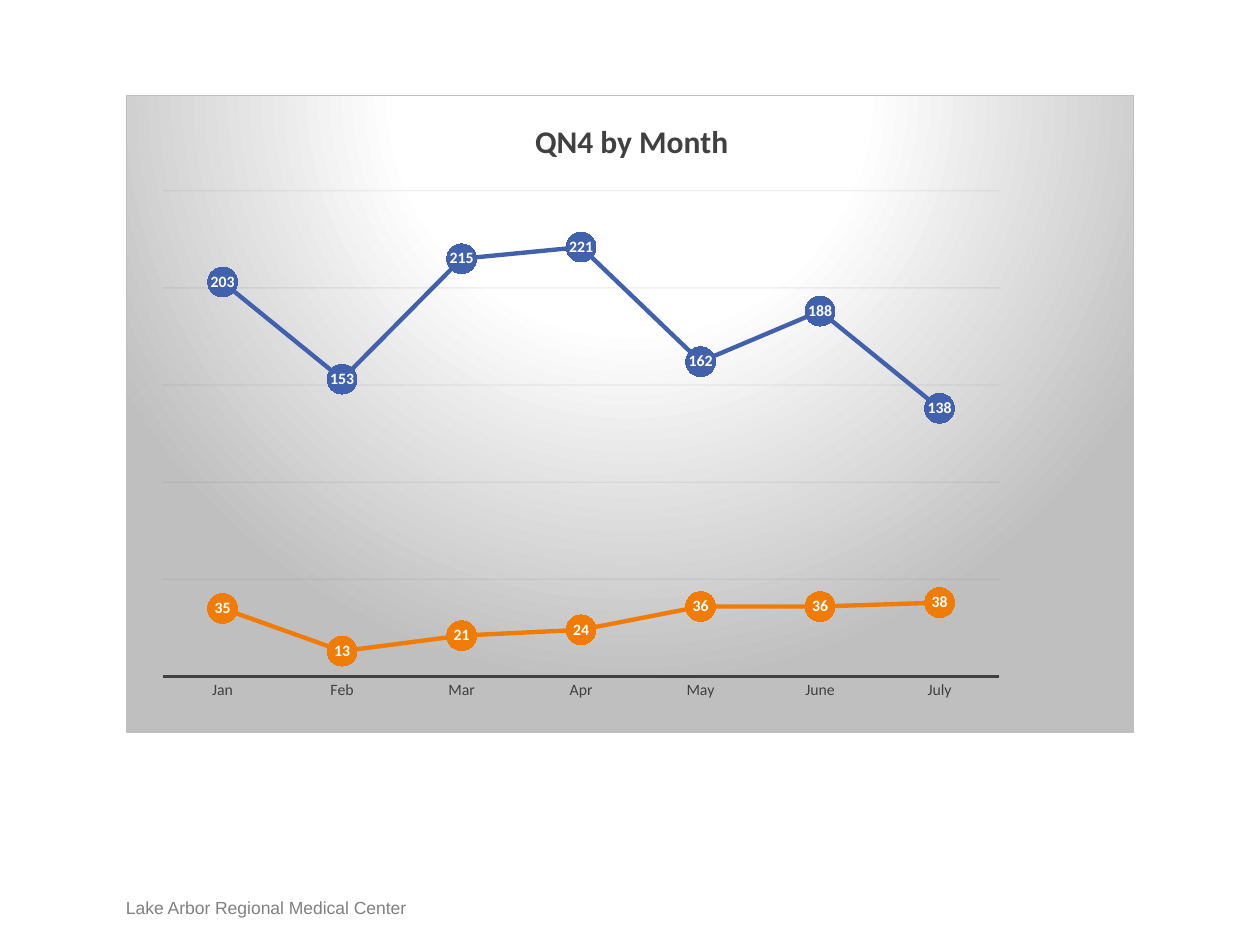
from lxml import etree
from pptx import Presentation
from pptx.chart.data import CategoryChartData
from pptx.dml.color import RGBColor
from pptx.enum.chart import (XL_CHART_TYPE, XL_LABEL_POSITION, XL_MARKER_STYLE,
                             XL_TICK_LABEL_POSITION, XL_TICK_MARK)
from pptx.enum.text import MSO_ANCHOR
from pptx.oxml import parse_xml
from pptx.oxml.ns import nsdecls, qn
from pptx.util import Inches, Pt

LINE_MARKERS = XL_CHART_TYPE.LINE_MARKERS
CENTER = XL_LABEL_POSITION.CENTER
CIRCLE = XL_MARKER_STYLE.CIRCLE
NO_TICK = XL_TICK_MARK.NONE
NEXT_TO_AXIS = XL_TICK_LABEL_POSITION.NEXT_TO_AXIS
BOTTOM = MSO_ANCHOR.BOTTOM

BLUE = RGBColor(0x42, 0x61, 0xAD)
ORANGE = RGBColor(0xF0, 0x7B, 0x05)
WHITE = RGBColor(0xFF, 0xFF, 0xFF)
BLACK = RGBColor(0, 0, 0)
DARK = RGBColor(0x40, 0x40, 0x40)
GRID = RGBColor(0x0D, 0x0D, 0x0D)
SILVER = RGBColor(0xBF, 0xBF, 0xBF)
GRAY = RGBColor(0x80, 0x80, 0x80)

# Content
TITLE = "QN4 by Month"
FOOTER = "Lake Arbor Regional Medical Center"
MONTHS = ["Jan", "Feb", "Mar", "Apr", "May", "June", "July"]
SERIES = [
    ("Series 1", BLUE, [203, 153, 215, 221, 162, 188, 138]),
    ("Series 2", ORANGE, [35, 13, 21, 24, 36, 36, 38]),
]
BACKDROP_STOPS = [(0, WHITE), (39, WHITE), (100, SILVER)]


def style_font(font, size, color, name="Calibri", bold=False):
    font.name, font.size, font.bold = name, Pt(size), bold
    font.color.rgb = color


def manual_layout(**values):
    layout = etree.Element(qn("c:layout"))
    manual = etree.SubElement(layout, qn("c:manualLayout"))
    for tag, value in values.items():
        etree.SubElement(manual, qn("c:" + tag)).set("val", str(value))
    return layout


def backdrop():
    stops = "".join(f'<a:gs pos="{pos * 1000}"><a:srgbClr val="{color}"/></a:gs>'
                    for pos, color in BACKDROP_STOPS)
    return parse_xml(
        f'<c:spPr {nsdecls("c", "a")}><a:gradFill><a:gsLst>{stops}</a:gsLst>'
        '<a:path path="circle"><a:fillToRect l="50000" t="-80000" r="50000" b="180000"/>'
        f'</a:path></a:gradFill><a:ln w="{Pt(0.75)}"><a:solidFill>'
        f'<a:srgbClr val="{SILVER}"/></a:solidFill></a:ln></c:spPr>')


prs = Presentation()
prs.slide_width, prs.slide_height = Inches(10), Inches(7.5)
s = prs.slides.add_slide(prs.slide_layouts[6])

# Chart and its backdrop
data = CategoryChartData()
data.categories = MONTHS
for name, _, values in SERIES:
    data.add_series(name, values)
chart = s.shapes.add_chart(LINE_MARKERS, Inches(1), Inches(0.75),
                           Inches(8), Inches(5.07), data).chart
chart.has_legend = False
style_font(chart.font, 10, BLACK)
chart_space = chart.element
chart_space.find(qn("c:chart")).addnext(backdrop())

# Chart title
chart.has_title = True
title = chart.chart_title
title.text_frame.text = TITLE
style_font(title.text_frame.paragraphs[0].runs[0].font, 18, DARK, bold=True)
title.include_in_layout = False
title_xml = chart_space.find(".//" + qn("c:title"))
for old in title_xml.findall(qn("c:layout")):
    title_xml.remove(old)
title_xml.find(qn("c:tx")).addnext(
    manual_layout(xMode="edge", yMode="edge", x=0.4, y=0.03))

# Plot area
plot_area = chart_space.find(".//" + qn("c:plotArea"))
for old in plot_area.findall(qn("c:layout")):
    plot_area.remove(old)
plot_area.insert(0, manual_layout(layoutTarget="inner", xMode="edge", yMode="edge",
                                  x=0.036, y=0.15, w=0.831, h=0.762))

# Axes
months = chart.category_axis
months.major_tick_mark = months.minor_tick_mark = NO_TICK
months.tick_label_position = NEXT_TO_AXIS
style_font(months.tick_labels.font, 9, DARK)
months.format.line.color.rgb = DARK
months.format.line.width = Pt(1.5)
counts = chart.value_axis
counts.minimum_scale, counts.maximum_scale, counts.major_unit = 0, 250, 50
counts.visible = False
counts.has_major_gridlines = True
grid = counts.major_gridlines.format.line
grid.color.rgb = GRID
grid.width = Pt(0.75)
grid_color = chart_space.find(".//" + qn("c:majorGridlines")).find(".//" + qn("a:srgbClr"))
etree.SubElement(grid_color, qn("a:alpha")).set("val", "5000")

# Series
for series, (_, color, _) in zip(chart.plots[0].series, SERIES):
    series.smooth = False
    series.format.line.color.rgb = color
    series.format.line.width = Pt(2.5)
    marker = series.marker
    marker.style, marker.size = CIRCLE, 17
    marker.format.fill.solid()
    marker.format.fill.fore_color.rgb = color
    marker.format.line.fill.background()
    labels = series.data_labels
    labels.show_value = True
    labels.position = CENTER
    style_font(labels.font, 9, WHITE, bold=True)

# Footer
tf = s.shapes.add_textbox(Inches(1), Inches(7.12), Inches(3.17), Inches(0.17)).text_frame
tf.word_wrap = True
tf.vertical_anchor = BOTTOM
tf.margin_left = tf.margin_right = tf.margin_top = tf.margin_bottom = 0
tf.text = FOOTER
style_font(tf.paragraphs[0].runs[0].font, 10, GRAY, name="Arial")

prs.save("out.pptx")
